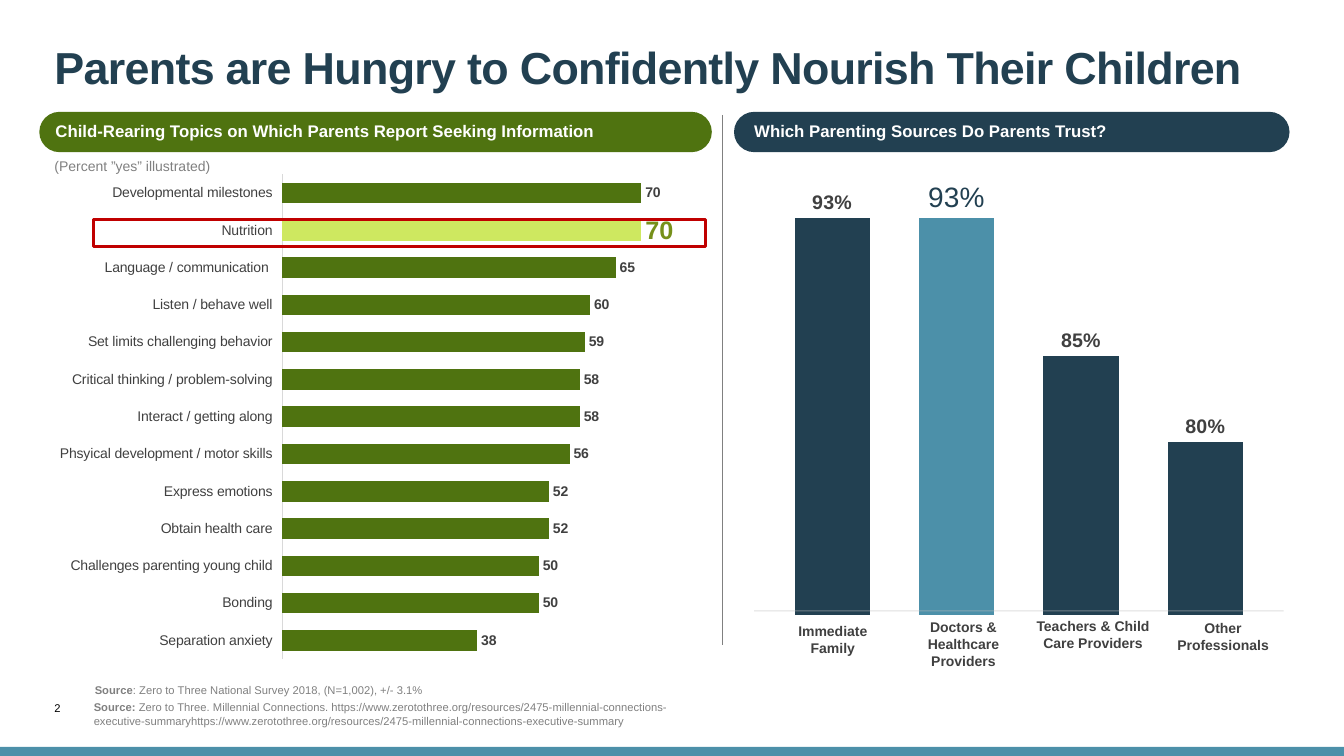
from lxml.etree import SubElement
from pptx import Presentation
from pptx.chart.data import CategoryChartData
from pptx.dml.color import RGBColor
from pptx.enum.chart import XL_CHART_TYPE, XL_LABEL_POSITION, XL_TICK_LABEL_POSITION, XL_TICK_MARK
from pptx.enum.shapes import MSO_CONNECTOR, MSO_SHAPE
from pptx.enum.text import MSO_ANCHOR, MSO_AUTO_SIZE, PP_ALIGN
from pptx.oxml.ns import qn
from pptx.util import Emu, Pt

PX = 9144
FONT = "Arial"
NAVY, TEAL, GREEN, LIME = "224051", "4C90A9", "4F7310", "CEE860"
DARK, GRAY, WHITE, RED = "404040", "808080", "FFFFFF", "C00000"

TOPICS = [
    ("Separation anxiety", 38),
    ("Bonding", 50),
    ("Challenges parenting young child", 50),
    ("Obtain health care", 52),
    ("Express emotions", 52),
    ("Phsyical development / motor skills", 56),
    ("Interact / getting along", 58),
    ("Critical thinking / problem-solving", 58),
    ("Set limits challenging behavior", 59),
    ("Listen / behave well", 60),
    ("Language / communication ", 65),
    ("Nutrition", 70),
    ("Developmental milestones", 70),
]
TRUST = [("1", 0.93), ("2", 0.93), ("3", 0.85), ("4", 0.8)]
SOURCE_LABELS = [
    ("Immediate Family", 776, 618, 100),
    ("Doctors &\vHealthcare Providers", 888, 614, 135),
    ("Teachers & Child Care Providers", 1025, 613, 118),
    ("Other Professionals", 1154, 615, 118),
]
SURVEY = ("Source", ": Zero to Three National Survey 2018, (N=1,002), +/- 3.1%")
CONNECTIONS = (
    "Source: ",
    "Zero to Three. Millennial Connections. "
    "https://www.zerotothree.org/resources/2475-millennial-connections-executive-summary"
    "https://www.zerotothree.org/resources/2475-millennial-connections-executive-summary",
)


def px(*lengths):
    return [Emu(n * PX) for n in lengths]


def rgb(color):
    return RGBColor.from_string(color)


def set_font(font, size, color, bold=False):
    font.name = FONT
    font.size = Pt(size)
    font.bold = bold
    font.color.rgb = rgb(color)


def set_frame(tf, inset=0, anchor=MSO_ANCHOR.TOP):
    tf.word_wrap = True
    tf.auto_size = MSO_AUTO_SIZE.NONE
    tf.vertical_anchor = anchor
    tf.margin_left = tf.margin_right = 0
    tf.margin_top, tf.margin_bottom = px(inset, inset)


def add_title(s, text, box):
    sp = s.shapes.title
    sp.left, sp.top, sp.width, sp.height = px(*box)
    tf = sp.text_frame
    set_frame(tf, anchor=MSO_ANCHOR.MIDDLE)
    tf.text = text
    p = tf.paragraphs[0]
    p.alignment = PP_ALIGN.LEFT
    p.line_spacing = 0.8
    r = p.runs[0]
    set_font(r.font, 32, NAVY, True)
    r.font._element.set("spc", "-50")


def add_text(s, text, box, size, color, bold=False, inset=0,
             align=PP_ALIGN.LEFT, anchor=MSO_ANCHOR.TOP):
    tf = s.shapes.add_textbox(*px(*box)).text_frame
    set_frame(tf, inset, anchor)
    p = tf.paragraphs[0]
    p.text = text
    p.alignment = align
    for r in p.runs:
        set_font(r.font, size, color, bold)


def add_source(s, parts, box, inset=0):
    tf = s.shapes.add_textbox(*px(*box)).text_frame
    set_frame(tf, inset)
    for text, bold in zip(parts, (True, False)):
        r = tf.paragraphs[0].add_run()
        r.text = text
        set_font(r.font, 8, GRAY, bold)


def add_box(s, kind, box, fill=None, line=None):
    sp = s.shapes.add_shape(kind, *px(*box))
    sp.shadow.inherit = False
    if fill:
        sp.fill.solid()
        sp.fill.fore_color.rgb = rgb(fill)
    else:
        sp.fill.background()
    if line:
        sp.line.color.rgb = rgb(line)
        sp.line.width = Pt(2.25)
    else:
        sp.line.fill.background()
    return sp


def add_pill(s, box, fill):
    add_box(s, MSO_SHAPE.ROUNDED_RECTANGLE, box, fill).adjustments[0] = 0.5


def add_line(s, ends, color, opacity=100):
    cn = s.shapes.add_connector(MSO_CONNECTOR.STRAIGHT, *px(*ends))
    cn.line.color.rgb = rgb(color)
    cn.line.width = Pt(0.75)
    SubElement(cn._element.spPr, qn("a:effectLst"))
    if opacity < 100:
        clr = cn._element.spPr.find(".//" + qn("a:srgbClr"))
        SubElement(clr, qn("a:alpha")).set("val", str(opacity * 1000))


def set_plot(chart, area):
    plot_area = chart._chartSpace.chart.plotArea
    for old in plot_area.findall(qn("c:layout")):
        plot_area.remove(old)
    layout = SubElement(plot_area, qn("c:layout"))
    plot_area.insert(0, layout)
    manual = SubElement(layout, qn("c:manualLayout"))
    values = [("layoutTarget", "inner"), ("xMode", "edge"), ("yMode", "edge"), *zip("xywh", area)]
    for tag, value in values:
        SubElement(manual, qn("c:" + tag)).set("val", str(value))


def add_bars(s, kind, rows, box, area, limits, gap, overlap, color, label_size, fmt):
    data = CategoryChartData(number_format=fmt)
    data.categories = [name for name, _ in rows]
    data.add_series("Series 1", [value for _, value in rows])
    chart = s.shapes.add_chart(kind, *px(*box), data).chart
    chart.has_legend = chart.has_title = False
    set_font(chart.font, 10, "000000")
    set_plot(chart, area)
    axis = chart.value_axis
    axis.minimum_scale, axis.maximum_scale = limits
    axis.has_major_gridlines = False
    axis.visible = False
    plot = chart.plots[0]
    plot.vary_by_categories = False
    plot.gap_width, plot.overlap = gap, overlap
    series = plot.series[0]
    series.format.fill.solid()
    series.format.fill.fore_color.rgb = rgb(color)
    labels = series.data_labels
    labels.show_value = True
    labels.number_format, labels.number_format_is_linked = fmt, False
    labels.position = XL_LABEL_POSITION.OUTSIDE_END
    set_font(labels.font, label_size, DARK, True)
    return chart


def highlight(chart, index, color):
    point = chart.plots[0].series[0].points[index]
    point.format.fill.solid()
    point.format.fill.fore_color.rgb = rgb(color)
    return point.data_label


def add_topics_chart(s):
    chart = add_bars(s, XL_CHART_TYPE.BAR_CLUSTERED, TOPICS, (54, 163, 646, 501),
                     (0.35, 0.02, 0.63, 0.96), (0, 80), 81, 0, GREEN, 10, "General")
    axis = chart.category_axis
    axis.major_tick_mark = XL_TICK_MARK.NONE
    axis.tick_label_position = XL_TICK_LABEL_POSITION.LOW
    axis.format.line.color.rgb = rgb("D9D9D9")
    axis.format.line.width = Pt(0.75)
    set_font(axis.tick_labels.font, 10, DARK)
    label = highlight(chart, 11, LIME)
    set_font(label.font, 18, "76901A", True)
    label.position = XL_LABEL_POSITION.OUTSIDE_END


def add_trust_chart(s):
    chart = add_bars(s, XL_CHART_TYPE.COLUMN_CLUSTERED, TRUST, (748, 168, 525, 470),
                     (0.03, 0.03, 0.94, 0.91), (0.7, 0.95), 65, -27, NAVY, 14, "0%")
    chart.category_axis.visible = False
    label = highlight(chart, 1, TEAL)
    set_font(label.font, 20, NAVY)
    label.position = XL_LABEL_POSITION.OUTSIDE_END


def main():
    prs = Presentation()
    prs.slide_width, prs.slide_height = px(1333, 750)
    s = prs.slides.add_slide(prs.slide_layouts[5])
    add_box(s, MSO_SHAPE.RECTANGLE, (0, 741, 1333, 9), TEAL)
    add_pill(s, (728, 111, 551, 40), NAVY)
    add_pill(s, (39, 111, 667, 40), GREEN)
    add_title(s, "Parents are Hungry to Confidently Nourish Their Children", (54, 54, 1250, 35))
    add_source(s, CONNECTIONS, (93, 690, 601, 37), inset=5)
    add_topics_chart(s)
    add_text(s, "Child-Rearing Topics on Which Parents Report Seeking Information",
             (55, 120, 630, 20), 12, WHITE, True)
    add_source(s, SURVEY, (94, 678, 350, 13))
    add_trust_chart(s)
    add_text(s, "Which Parenting Sources Do Parents Trust?", (748, 120, 418, 23), 12, WHITE, True)
    add_line(s, (717, 114, 717, 640), GRAY)
    add_text(s, "(Percent ”yes” illustrated)", (54, 151, 667, 27), 10, GRAY, inset=5)
    for text, left, top, width in SOURCE_LABELS:
        add_text(s, text, (left, top, width, 17), 10, DARK, True, align=PP_ALIGN.CENTER)
    add_line(s, (748, 606, 1273, 606), "BFBFBF", opacity=50)
    add_text(s, "2", (54, 682, 60, 40), 8, "000000", anchor=MSO_ANCHOR.MIDDLE)
    add_box(s, MSO_SHAPE.RECTANGLE, (93, 218, 607, 27), line=RED)
    prs.save("out.pptx")


if __name__ == "__main__":
    main()
